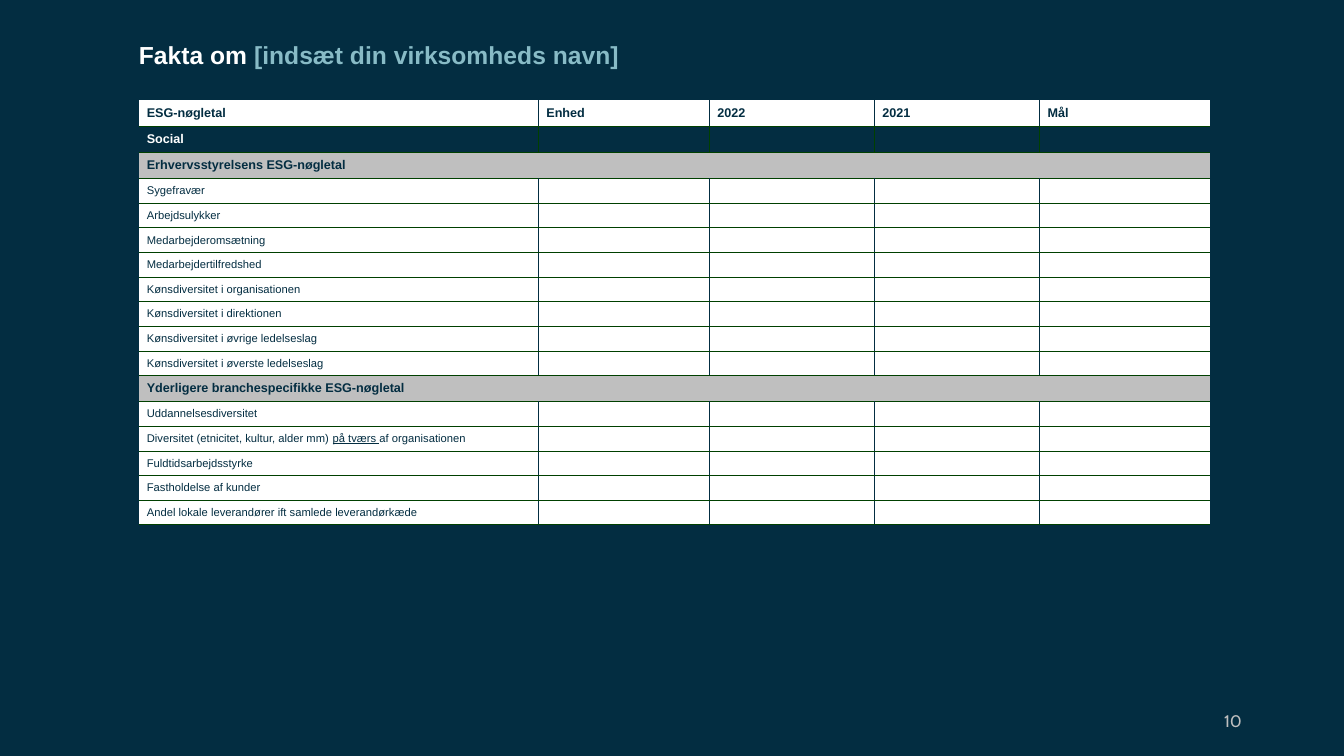
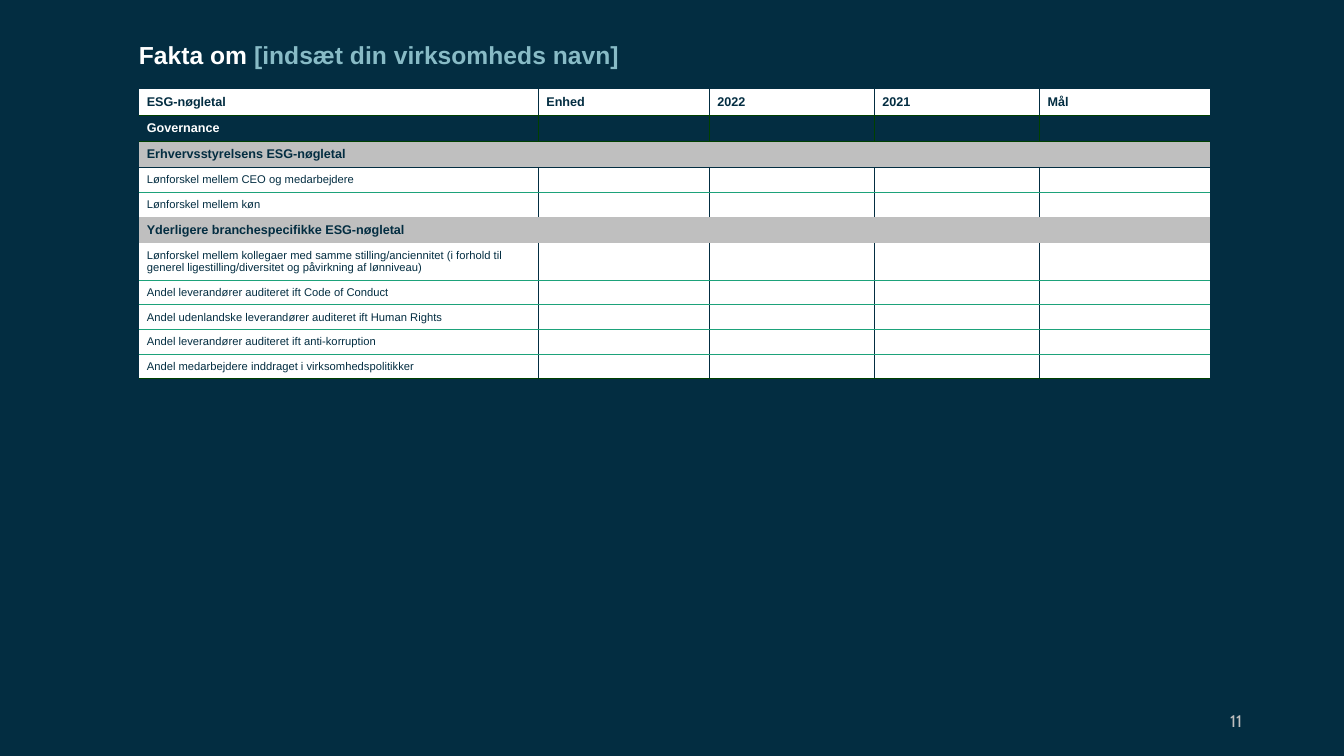
from pptx import Presentation
from pptx.dml.color import RGBColor as RGB
from pptx.enum.text import MSO_ANCHOR as Anchor, PP_ALIGN as Align
from pptx.oxml.ns import qn
from pptx.util import Cm, Pt
from lxml.etree import Element, SubElement as Sub

# Colours and type
NAVY, WHITE, GREY, SKY = "032D41", "FFFFFF", "BFBFBF", "88BBC6"
PINE, MINT = "004000", "1DA27A"
FONT = "Arial"

# Content: text between underscores is underlined
TITLE = [("Fakta om ", WHITE), ("[indsæt din virksomheds navn]", SKY)]
HEADS = ["ESG-nøgletal", "Enhed", "2022", "2021", "Mål"]
MAIN = "Erhvervsstyrelsens ESG-nøgletal"
MORE = "Yderligere branchespecifikke ESG-nøgletal"

# Each group: title, lines (under title, between items, at end), items
PAGES = [
    {"num": "10", "top": 2.52, "band": "Social", "groups": [
        (MAIN, (PINE, PINE, PINE), [
            "Sygefravær",
            "Arbejdsulykker",
            "Medarbejderomsætning",
            "Medarbejdertilfredshed",
            "Kønsdiversitet i organisationen",
            "Kønsdiversitet i direktionen",
            "Kønsdiversitet i øvrige ledelseslag",
            "Kønsdiversitet i øverste ledelseslag"]),
        (MORE, (PINE, PINE, PINE), [
            "Uddannelsesdiversitet",
            "Diversitet (etnicitet, kultur, alder mm) _på tværs _af organisationen",
            "Fuldtidsarbejdsstyrke",
            "Fastholdelse af kunder",
            "Andel lokale leverandører ift samlede leverandørkæde"])]},
    {"num": "11", "top": 2.24, "band": "Governance", "groups": [
        (MAIN, (NAVY, MINT, None), [
            "Lønforskel mellem CEO og medarbejdere",
            "Lønforskel mellem køn"]),
        (MORE, (None, MINT, PINE), [
            "Lønforskel mellem kollegaer med samme stilling/anciennitet "
            "(i forhold til generel ligestilling/diversitet og påvirkning af lønniveau)",
            "Andel leverandører auditeret ift Code of Conduct",
            "Andel udenlandske leverandører auditeret ift Human Rights",
            "Andel leverandører auditeret ift anti-korruption",
            "Andel medarbejdere inddraget i virksomhedspolitikker"])]},
]

# Row kinds: fill, text colour, size, bold, height, upright line
KINDS = {
    "head": (WHITE, NAVY, 9, True, 0.66, NAVY),
    "band": (NAVY, WHITE, 9, True, 0.66, PINE),
    "group": (GREY, NAVY, 9, True, 0.66, None),
    "item": (WHITE, NAVY, 8, False, 0.62, NAVY),
}
LEFT, WIDTH = 3.5, 27
COLS = [10.07, 4.31, 4.16, 4.16, 4.3]
TALL, LONG = 0.94, 80  # height of a two-line row, letters that need one


def rgb(code):
    return RGB.from_string(code)


def style(run, size, color, bold=False, face=FONT):
    font = run.font
    font.name, font.size, font.bold = face, Pt(size), bold
    font.color.rgb = rgb(color)


def add_box(slide, left, top, width, height):
    box = slide.shapes.add_textbox(Cm(left), Cm(top), Cm(width), Cm(height))
    box.text_frame.word_wrap = True
    return box.text_frame


def add_title(slide):
    frame = add_box(slide, LEFT, 1.09, WIDTH, 0.89)
    frame.margin_left = frame.margin_right = 0
    frame.margin_top = frame.margin_bottom = 0
    para = frame.paragraphs[0]
    para.line_spacing = 0.9
    for text, color in TITLE:
        run = para.add_run()
        run.text = text
        style(run, 17.6, color, True)


def add_num(slide, num):
    frame = add_box(slide, 23.93, 17.65, 7.62, 1.02)
    frame.vertical_anchor = Anchor.MIDDLE
    para = frame.paragraphs[0]
    para.text, para.alignment = num, Align.RIGHT
    style(para.runs[0], 12, GREY, face="Cabin")


def set_lines(cell, *colors):
    """Draw the left, right, top and bottom lines; None means no line."""
    props = cell._tc.get_or_add_tcPr()
    for pos, (side, color) in enumerate(zip("LRTB", colors)):
        line = Element(qn("a:ln" + side), w=str(Pt(0.5)))
        if color:
            Sub(Sub(line, qn("a:solidFill")), qn("a:srgbClr"), val=color)
        else:
            Sub(line, qn("a:noFill"))
        props.insert(pos, line)


def fill_cell(cell, text, kind):
    fill, color, size, bold = KINDS[kind][:4]
    cell.fill.solid()
    cell.fill.fore_color.rgb = rgb(fill)
    cell.vertical_anchor = Anchor.MIDDLE
    cell.margin_left = cell.margin_right = Cm(0.2)
    cell.margin_top = cell.margin_bottom = Cm(0.1)
    para = cell.text_frame.paragraphs[0]
    if not text:  # keeps an empty cell from growing
        Sub(para._p, qn("a:endParaRPr"), sz=str(size * 100))
        return
    for pos, part in enumerate(text.split("_")):
        run = para.add_run()
        run.text = part
        style(run, size, color, bold)
        if pos % 2:
            run.font.underline = True


def list_rows(page):
    """Give kind, cell texts and line below for each row."""
    rows = [("head", HEADS, PINE), ("band", [page["band"]], PINE)]
    for title, (under, inner, end), items in page["groups"]:
        rows.append(("group", [title], under))
        rows += [("item", [item], inner) for item in items[:-1]]
        rows.append(("item", [items[-1]], end))
    return rows


def add_grid(slide, page):
    rows = list_rows(page)
    tall = [TALL if len(texts[0]) > LONG else KINDS[kind][4]
            for kind, texts, _ in rows]
    grid = slide.shapes.add_table(len(rows), len(COLS), Cm(LEFT), Cm(page["top"]),
                                  Cm(WIDTH), Cm(sum(tall))).table
    grid.first_row = grid.horz_banding = False
    for col, width in zip(grid.columns, COLS):
        col.width = Cm(width)

    last, above = len(COLS) - 1, None
    for r, (kind, texts, below) in enumerate(rows):
        grid.rows[r].height = Cm(tall[r])
        side = KINDS[kind][5]
        for c in range(len(COLS)):
            cell = grid.cell(r, c)
            fill_cell(cell, texts[c] if c < len(texts) else "", kind)
            set_lines(cell, side if c else None, side if c < last else None,
                      above, below)
        if kind == "group":
            grid.cell(r, 0).merge(grid.cell(r, last))
        above = below


def main():
    prs = Presentation()
    prs.slide_width, prs.slide_height = Cm(33.87), Cm(19.05)
    back = prs.slide_master.background.fill
    back.solid()
    back.fore_color.rgb = rgb(NAVY)
    for page in PAGES:
        slide = prs.slides.add_slide(prs.slide_layouts[6])
        add_num(slide, page["num"])
        add_title(slide)
        add_grid(slide, page)
    prs.save("out.pptx")


if __name__ == "__main__":
    main()
